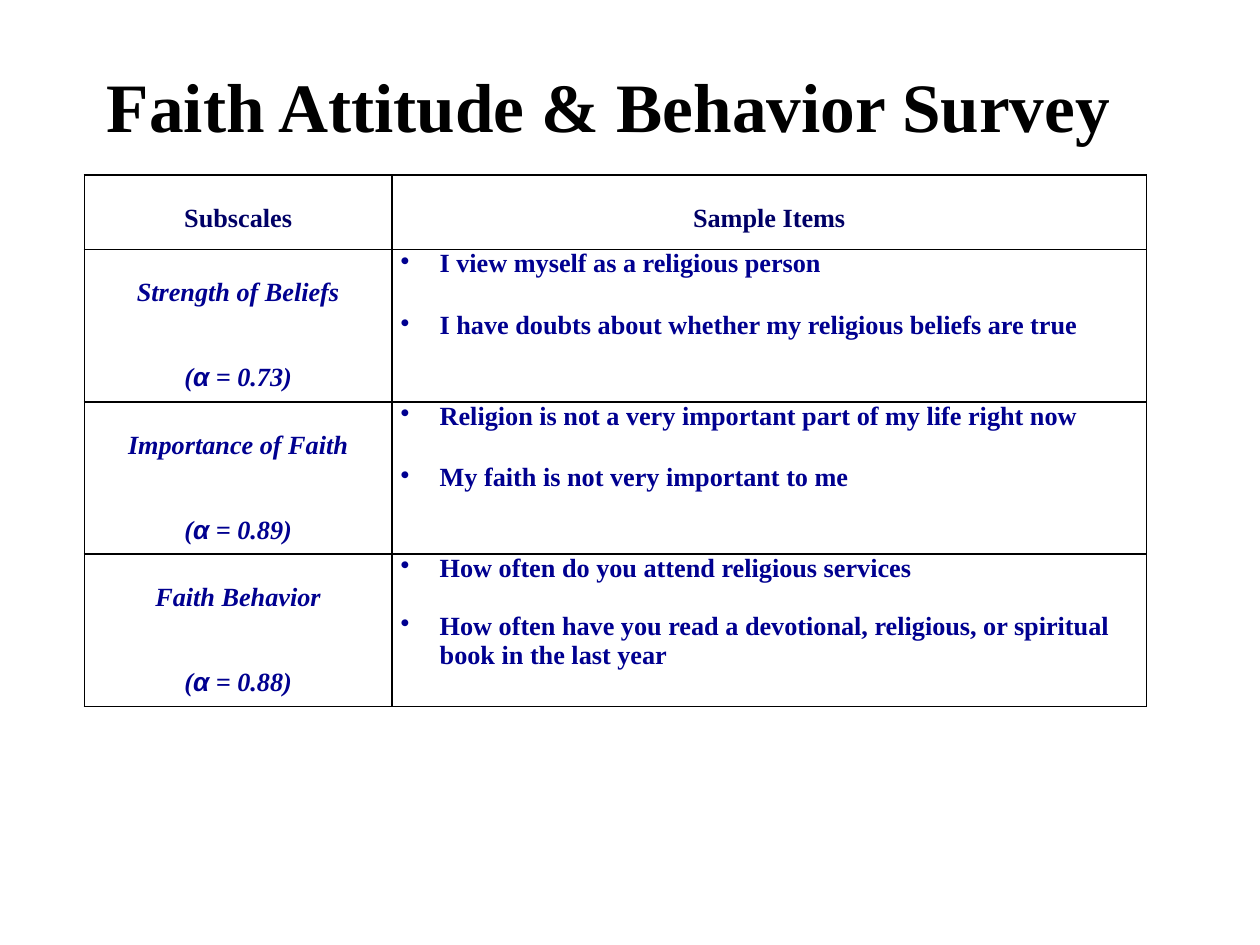
"""Build the Faith Attitude & Behavior Survey slide."""
from lxml import etree
from pptx import Presentation
from pptx.dml.color import RGBColor
from pptx.enum import text
from pptx.oxml import ns
from pptx.util import Inches, Pt

COLORS = {"title": "000000", "header": "000066", "body": "000090", "border": "000000"}
HEADERS = ["Subscales", "Sample Items"]
SUBSCALES = [
    ("Strength of Beliefs", "0.73", 18.8,
     ["I view myself as a religious person",
      "I have doubts about whether my religious beliefs are true"]),
    ("Importance of Faith", "0.89", 18.8,
     ["Religion is not a very important part of my life right now",
      "My faith is not very important to me"]),
    ("Faith Behavior", "0.88", 16.6,
     ["How often do you attend religious services",
      "How often have you read a devotional, religious, or spiritual book in the last year"]),
]


def style(para, size, color, italic=False):
    """Set the bold serif font of a paragraph."""
    para.font.name = "Times New Roman"
    para.font.size = Pt(size)
    para.font.bold = True
    para.font.italic = italic
    para.font.color.rgb = RGBColor.from_string(COLORS[color])


def prepare(cell):
    """Clear the fill of a cell, set its margins and draw its borders."""
    cell.fill.background()
    cell.margin_left = cell.margin_right = Inches(0.07)
    cell.margin_top = cell.margin_bottom = 0
    properties = cell._tc.get_or_add_tcPr()
    for index, side in enumerate(["lnL", "lnR", "lnT", "lnB"]):
        line = etree.Element(ns.qn(f"a:{side}"), w=str(Pt(1)))
        fill = etree.SubElement(line, ns.qn("a:solidFill"))
        etree.SubElement(fill, ns.qn("a:srgbClr"), val=COLORS["border"])
        properties.insert(index, line)


deck = Presentation()
deck.slide_width, deck.slide_height = Inches(10), Inches(7.5)
page = deck.slides.add_slide(deck.slide_layouts[6])

title = page.shapes.add_textbox(Inches(0.75), Inches(0.21), Inches(8.25), Inches(1.25))
title.text_frame.word_wrap = True
title.text_frame.vertical_anchor = text.MSO_ANCHOR.MIDDLE
para = title.text_frame.paragraphs[0]
para.text = "Faith Attitude & Behavior Survey"
style(para, 39.6, "title")

widths, heights = [2.44, 5.99], [0.59, 1.18, 1.18, 1.13]
table = page.shapes.add_table(
    len(heights), len(widths), Inches(0.67), Inches(1.39),
    Inches(sum(widths)), Inches(sum(heights))).table
table.first_row = table.horz_banding = False
for column, width in zip(table.columns, widths):
    column.width = Inches(width)
for row, height in zip(table.rows, heights):
    row.height = Inches(height)
for cell in table.iter_cells():
    prepare(cell)

for column, header in enumerate(HEADERS):
    para = table.cell(0, column).text_frame.paragraphs[0]
    para.text = header
    para.alignment = text.PP_ALIGN.CENTER
    para.line_spacing = 2.0
    style(para, 15, "header")

for row, (name, alpha, gap, items) in enumerate(SUBSCALES, start=1):
    frame = table.cell(row, 0).text_frame
    frame.paragraphs[0].text = name
    reliability = frame.add_paragraph()
    reliability.space_before = Pt(12)
    for part in ["(", "α", f" = {alpha})"]:
        span = reliability.add_run()
        span.text = part
        if part == "α":
            span.font.name = "Arial"
    for para in frame.paragraphs:
        para.alignment = text.PP_ALIGN.CENTER
        para.line_spacing = 2.0
        para.space_after = Pt(3)
        style(para, 15, "body", italic=True)

    frame = table.cell(row, 1).text_frame
    for index, item in enumerate(items):
        para = frame.add_paragraph() if index else frame.paragraphs[0]
        para.text = item
        properties = para._p.get_or_add_pPr()
        properties.set("marL", str(Inches(0.31)))
        properties.set("indent", str(Inches(-0.31)))
        etree.SubElement(properties, ns.qn("a:buChar"), char="•")
        if index:
            para.space_before = Pt(gap)
        style(para, 15, "body")

deck.save("out.pptx")
